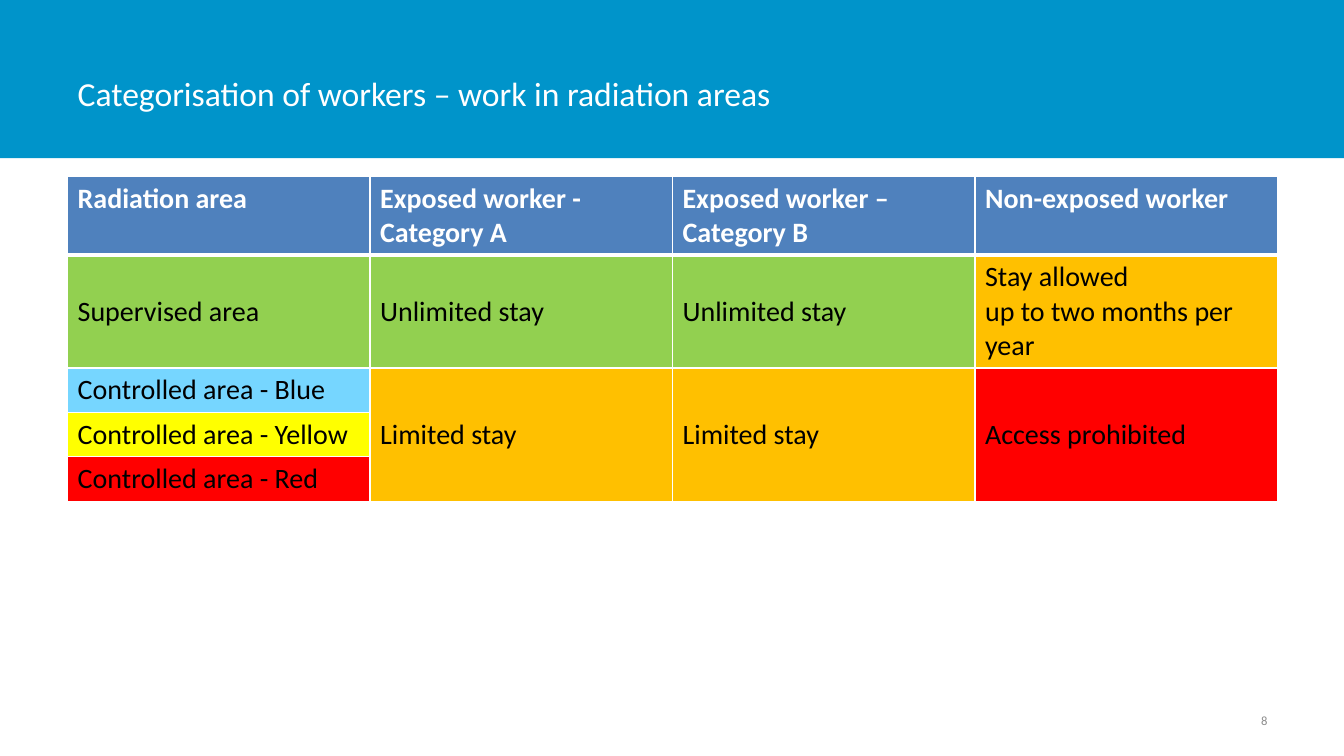
"""Build a slide on worker groups and their stay in radiation areas."""
from dataclasses import dataclass

from lxml.etree import SubElement as Sub
from pptx import Presentation
from pptx.dml.color import RGBColor as Rgb
from pptx.enum.shapes import MSO_SHAPE as Kind
from pptx.enum.text import MSO_ANCHOR as Anchor, PP_ALIGN as Align
from pptx.oxml.ns import qn
from pptx.util import Inches, Pt


@dataclass(frozen=True)
class Theme:
    font: str = "Calibri"
    band: str = "0094CA"
    head: str = "4F81BD"
    green: str = "92D050"
    amber: str = "FFC000"
    blue: str = "76D6FF"
    yellow: str = "FFFF00"
    red: str = "FF0000"
    white: str = "FFFFFF"
    black: str = "000000"
    gray: str = "8C8C8C"
    title: int = 24
    body: int = 20
    small: int = 9


@dataclass(frozen=True)
class Entry:
    row: int
    col: int
    text: str
    fill: str
    span: int = 1


T = Theme()
HEADS = ("Radiation area", "Exposed worker - Category A",
         "Exposed worker – Category B", "Non-exposed worker")
HEIGHTS = (0.78, 1.12, 0.44, 0.44, 0.44)
WIDTH = 3
ENTRIES = [Entry(0, col, text, T.head) for col, text in enumerate(HEADS)] + [
    Entry(1, 0, "Supervised area", T.green),
    Entry(1, 1, "Unlimited stay", T.green),
    Entry(1, 2, "Unlimited stay", T.green),
    Entry(1, 3, "Stay allowed\nup to two months per year", T.amber),
    Entry(2, 0, "Controlled area - Blue", T.blue),
    Entry(2, 1, "Limited stay", T.amber, 3),
    Entry(2, 2, "Limited stay", T.amber, 3),
    Entry(2, 3, "Access prohibited", T.red, 3),
    Entry(3, 0, "Controlled area - Yellow", T.yellow),
    Entry(4, 0, "Controlled area - Red", T.red),
]


def style(frame, size: int, color: str, bold: bool = False,
          align: Align = Align.LEFT) -> None:
    for para in frame.paragraphs:
        para.alignment = align
        for run in para.runs:
            font = run.font
            font.name, font.size, font.bold = T.font, Pt(size), bold
            font.color.rgb = Rgb.from_string(color)


def place(shape, left: float, top: float, width: float, height: float) -> None:
    shape.left, shape.top = Inches(left), Inches(top)
    shape.width, shape.height = Inches(width), Inches(height)


def border(cell, row: int) -> None:
    props = cell._tc.get_or_add_tcPr()
    for side in ("L", "R", "T", "B"):
        thick = (row, side) in ((0, "B"), (1, "T"))
        line = Sub(props, qn(f"a:ln{side}"), w=str(Pt(3 if thick else 1)))
        Sub(Sub(line, qn("a:solidFill")), qn("a:srgbClr"), val=T.white)


def draw_band(slide) -> None:
    band = slide.shapes.add_shape(
        Kind.RECTANGLE, 0, 0, Inches(13.33), Inches(1.57))
    band.shadow.inherit = False
    band.fill.solid()
    band.fill.fore_color.rgb = Rgb.from_string(T.band)
    band.line.fill.background()
    slide.shapes._spTree.insert(2, band._element)


def draw_title(slide) -> None:
    title = slide.shapes.title
    place(title, 0.67, 0.3, 10.41, 1.25)
    frame = title.text_frame
    frame.text = "Categorisation of workers – work in radiation areas"
    frame.vertical_anchor = Anchor.MIDDLE
    style(frame, T.title, T.white)


def draw_table(slide) -> None:
    table = slide.shapes.add_table(
        len(HEIGHTS), len(HEADS), Inches(0.67), Inches(1.75),
        Inches(WIDTH * len(HEADS)), Inches(sum(HEIGHTS))).table
    for col in table.columns:
        col.width = Inches(WIDTH)
    for index, height in enumerate(HEIGHTS):
        table.rows[index].height = Inches(height)
        for cell in table.rows[index].cells:
            border(cell, index)
    for entry in ENTRIES:
        cell = table.cell(entry.row, entry.col)
        if entry.span > 1:
            cell.merge(table.cell(entry.row + entry.span - 1, entry.col))
        cell.text_frame.text = entry.text
        cell.fill.solid()
        cell.fill.fore_color.rgb = Rgb.from_string(entry.fill)
        head = entry.row == 0
        cell.vertical_anchor = Anchor.TOP if head else Anchor.MIDDLE
        style(cell.text_frame, T.body, T.white if head else T.black, head)


def draw_number(slide) -> None:
    box = slide.shapes.add_textbox(0, 0, 0, 0)
    place(box, 9.56, 6.95, 3.11, 0.4)
    frame = box.text_frame
    frame.word_wrap = True
    frame.vertical_anchor = Anchor.MIDDLE
    frame.text = "8"
    style(frame, T.small, T.gray, align=Align.RIGHT)


def main() -> None:
    deck = Presentation()
    deck.slide_width, deck.slide_height = Inches(13.33), Inches(7.5)
    slide = deck.slides.add_slide(deck.slide_layouts[5])
    for draw in (draw_band, draw_title, draw_table, draw_number):
        draw(slide)
    deck.save("out.pptx")


if __name__ == "__main__":
    main()
